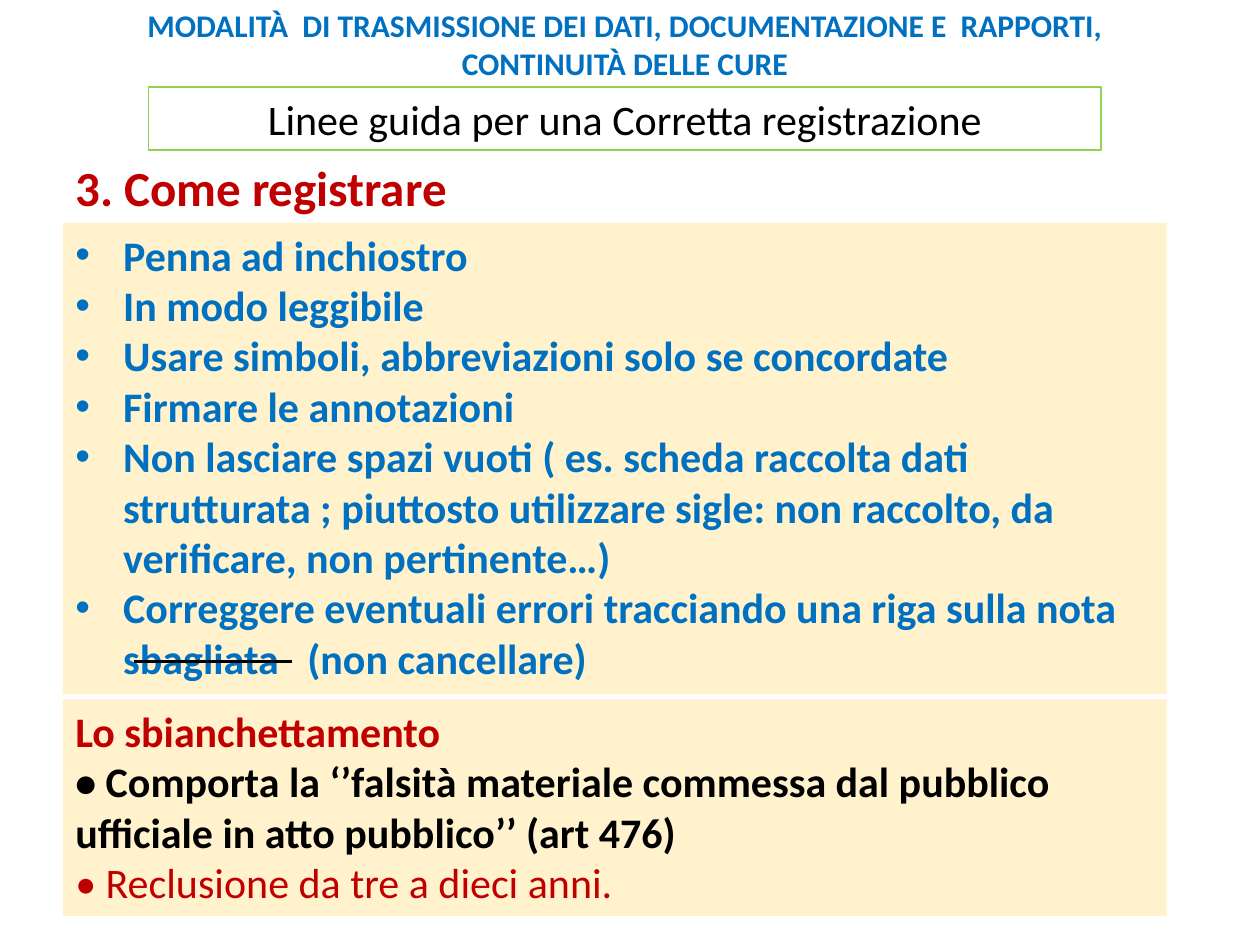
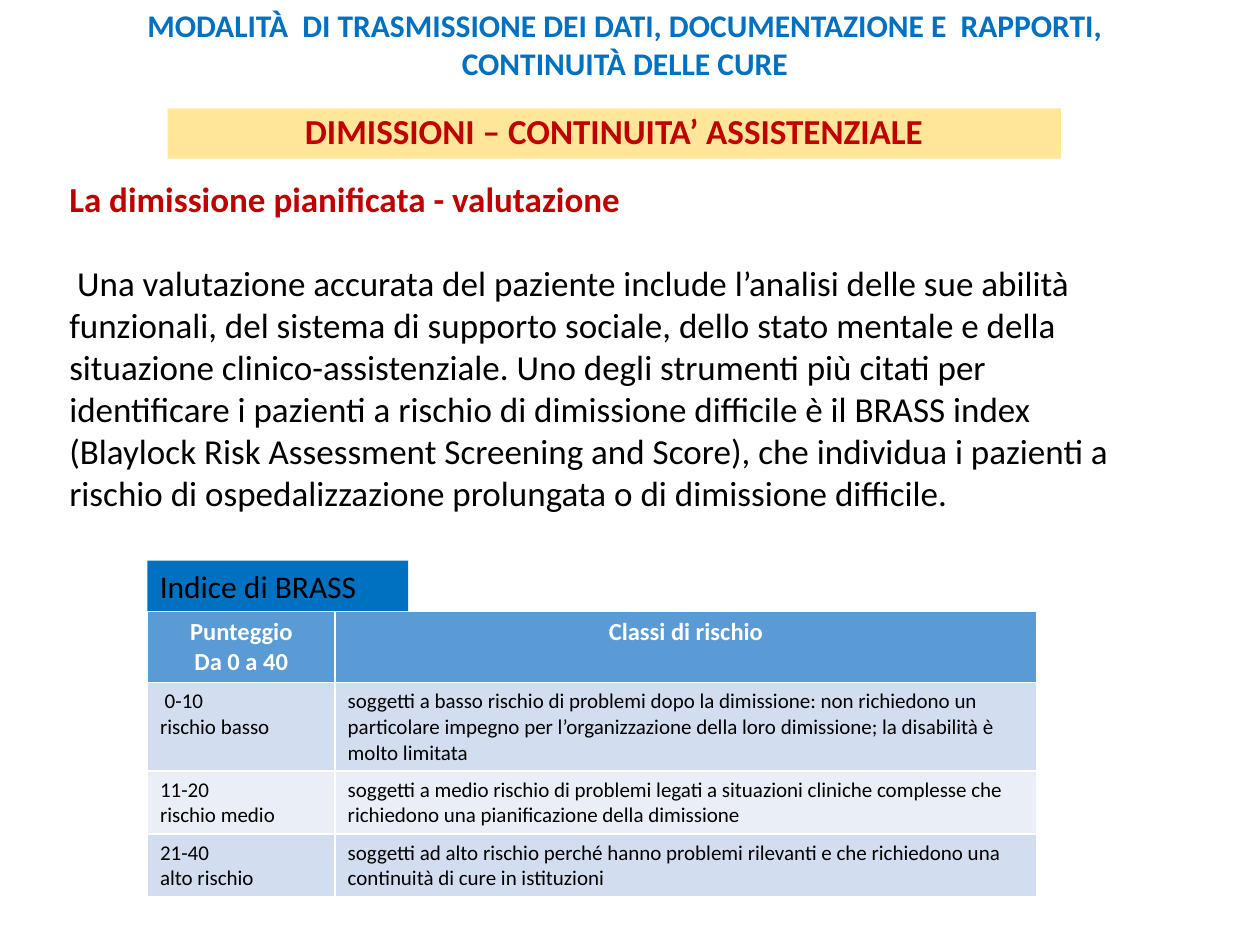
"""Build two slides on clinical records and planned discharge."""
from pptx import Presentation, util as u
from pptx.dml.color import RGBColor
from pptx.enum import shapes, text
from lxml import etree

BLUE, RED, BLACK, WHITE = "0070C0", "C00000", "000000", "FFFFFF"
CREAM, GOLD, GREEN = "FFF2CC", "FFE699", "92D050"
NS = "http://schemas.openxmlformats.org/drawingml/2006/main"
TITLE = "MODALITÀ  DI TRASMISSIONE DEI DATI, DOCUMENTAZIONE E  RAPPORTI, CONTINUITÀ DELLE CURE"
LEFT, MID = text.PP_ALIGN.LEFT, text.PP_ALIGN.CENTER


def write(frame, lines, size, align=LEFT):
    frame.word_wrap = True
    frame.vertical_anchor = text.MSO_ANCHOR.TOP
    for i, (words, tint, bold) in enumerate(lines):
        par = frame.paragraphs[0] if i == 0 else frame.add_paragraph()
        par.text = words
        par.alignment = align
        par.font.name = "Calibri"
        par.font.size = u.Pt(size)
        par.font.bold = bold
        par.font.color.rgb = RGBColor.from_string(tint)
    return frame


def box(slide, place, lines, size, align=LEFT, fill=None, edge=None):
    spot = [u.Inches(n) for n in place]
    if fill or edge:
        shape = slide.shapes.add_shape(shapes.MSO_SHAPE.RECTANGLE, *spot)
        shape.shadow.inherit = False
    else:
        shape = slide.shapes.add_textbox(*spot)
    if fill:
        shape.fill.solid()
        shape.fill.fore_color.rgb = RGBColor.from_string(fill)
    else:
        shape.fill.background()
    if edge:
        shape.line.color.rgb = RGBColor.from_string(edge)
        shape.line.width = u.Pt(0.75)
    else:
        shape.line.fill.background()
    return write(shape.text_frame, lines, size, align)


prs = Presentation()
prs.slide_width, prs.slide_height = u.Inches(10), u.Inches(7.5)
rules, leave = [prs.slides.add_slide(prs.slide_layouts[6]) for _ in range(2)]
for slide in (rules, leave):
    box(slide, (0.43, 0, 9.06, 0.71), [(TITLE, BLUE, True)], 18, MID)

box(rules, (1.18, 0.69, 7.56, 0.5),
    [("Linee guida per una Corretta registrazione", BLACK, False)], 24, MID, edge=GREEN)
box(rules, (0.5, 1.2, 3.65, 0.57), [("3. Come registrare", RED, True)], 28)
tips = [
    "Penna ad inchiostro",
    "In modo leggibile",
    "Usare simboli, abbreviazioni solo se concordate",
    "Firmare le annotazioni",
    "Non lasciare spazi vuoti ( es. scheda raccolta dati strutturata ; piuttosto utilizzare "
    "sigle: non raccolto, da verificare, non pertinente…)",
    "Correggere eventuali errori tracciando una riga sulla nota sbagliata   (non cancellare)",
]
frame = box(rules, (0.5, 1.77, 8.76, 3.74), [(tip, BLUE, True) for tip in tips], 24, fill=CREAM)
for par in frame.paragraphs:
    props = par._p.get_or_add_pPr()
    props.set("marL", str(u.Inches(0.38)))
    props.set("indent", str(u.Inches(-0.38)))
    etree.SubElement(props, f"{{{NS}}}buFont", typeface="Arial")
    etree.SubElement(props, f"{{{NS}}}buChar", char="•")
strike = rules.shapes.add_connector(
    shapes.MSO_CONNECTOR.STRAIGHT, *[u.Inches(n) for n in (1.06, 5.25, 2.32, 5.25)])
strike.line.color.rgb = RGBColor.from_string(BLACK)
strike.line.width = u.Pt(1.5)
etree.SubElement(strike._element.spPr, f"{{{NS}}}effectLst")
box(rules, (0.5, 5.55, 8.76, 1.72), [
    ("Lo sbianchettamento", RED, True),
    ("• Comporta la ‘’falsità materiale commessa dal pubblico ufficiale in atto pubblico’’ "
     "(art 476)", BLACK, True),
    ("• Reclusione da tre a dieci anni.", RED, False),
], 24, fill=CREAM)

frame = box(leave, (0.55, 1.41, 8.57, 3.05), [
    ("La dimissione pianificata - valutazione", RED, True),
    (" Una valutazione accurata del paziente include l’analisi delle sue abilità funzionali, "
     "del sistema di supporto sociale, dello stato mentale e della situazione "
     "clinico-assistenziale. Uno degli strumenti più citati per identificare i pazienti a "
     "rischio di dimissione difficile è il BRASS index (Blaylock Risk Assessment Screening "
     "and Score), che individua i pazienti a rischio di ospedalizzazione prolungata o di "
     "dimissione difficile.", BLACK, False),
], 20)
frame.margin_left = frame.margin_right = frame.margin_top = frame.margin_bottom = 0
frame.paragraphs[0].space_after = u.Pt(24)
frame = box(leave, (1.33, 0.86, 7.09, 0.4),
            [("DIMISSIONI – CONTINUITA’ ASSISTENZIALE", RED, True)], 20, MID, fill=GOLD)
frame.paragraphs[0].line_spacing = 0.9

rows = [
    (0.56, "5B9BD5", ["Punteggio", "Da 0 a 40"], "Classi di rischio"),
    (0.7, "D2DEEF", [" 0-10", "rischio basso"],
     "soggetti a basso rischio di problemi dopo la dimissione: non richiedono un particolare "
     "impegno per l’organizzazione della loro dimissione; la disabilità è molto limitata"),
    (0.5, "EAEFF7", ["11-20", "rischio medio"],
     "soggetti a medio rischio di problemi legati a situazioni cliniche complesse che "
     "richiedono una pianificazione della dimissione"),
    (0.5, "D2DEEF", ["21-40", "alto rischio"],
     "soggetti ad alto rischio perché hanno problemi rilevanti e che richiedono una "
     "continuità di cure in istituzioni"),
]
grid = leave.shapes.add_table(
    len(rows), 2, *[u.Inches(n) for n in (1.17, 4.85, 7.06, 2.26)]).table
for col, wide in zip(grid.columns, (1.49, 5.57)):
    col.width = u.Inches(wide)
for i, (high, fill, score, risk) in enumerate(rows):
    grid.rows[i].height = u.Inches(high)
    head = i == 0
    for cell, lines in zip(grid.rows[i].cells, (score, [risk])):
        cell.fill.solid()
        cell.fill.fore_color.rgb = RGBColor.from_string(fill)
        write(cell.text_frame, [(line, WHITE if head else BLACK, head) for line in lines],
              14 if head else 12, MID if head else LEFT)
box(leave, (1.17, 4.45, 2.07, 0.4), [("Indice di BRASS", BLACK, False)], 18, fill=BLUE)

prs.save("out.pptx")
